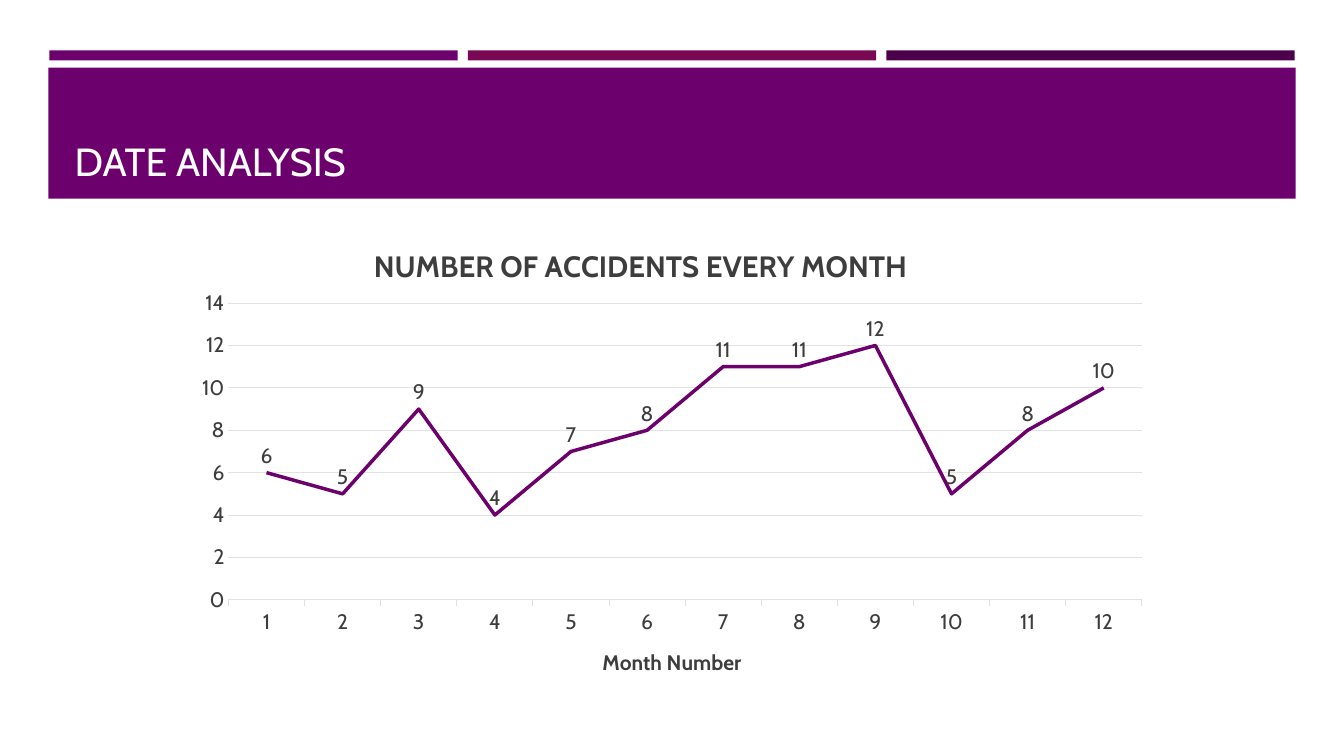
from lxml import etree
from pptx import Presentation
from pptx.chart.data import CategoryChartData
from pptx.dml.color import RGBColor
from pptx.enum import chart as charts, shapes, text
from pptx.oxml.ns import qn
from pptx.util import Inches, Pt

PURPLE = RGBColor(0x6C, 0x00, 0x6C)
PLUM = RGBColor(0x79, 0x07, 0x53)
DARK_PURPLE = RGBColor(0x4C, 0x00, 0x4C)
WHITE = RGBColor(0xFF, 0xFF, 0xFF)
GREY = RGBColor(0x3D, 0x3D, 0x3D)
LIGHT_GREY = RGBColor(0xE2, 0xE2, 0xE2)
FONT = "Cabin"

ACCIDENTS = [6, 5, 9, 4, 7, 8, 11, 11, 12, 5, 8, 10]


def set_font(font, size, color, bold=False):
    font.name = FONT
    font.size = Pt(size)
    font.bold = bold
    font.color.rgb = color


def set_line(line, color, width):
    line.color.rgb = color
    line.width = Pt(width)


def add_bar(page, left, top, width, height, color):
    bar = page.shapes.add_shape(shapes.MSO_SHAPE.RECTANGLE, Inches(left),
                                Inches(top), Inches(width), Inches(height))
    bar.shadow.inherit = False
    bar.fill.solid()
    bar.fill.fore_color.rgb = color
    bar.line.fill.background()


def add_title(page, words):
    title = page.shapes.title
    title.left, title.top = Inches(0.64), Inches(0.77)
    title.width, title.height = Inches(12.06), Inches(1.11)
    frame = title.text_frame
    frame.text = words
    frame.word_wrap = True
    frame.auto_size = text.MSO_AUTO_SIZE.NONE
    frame.vertical_anchor = text.MSO_ANCHOR.BOTTOM
    para = frame.paragraphs[0]
    para.alignment = text.PP_ALIGN.LEFT
    set_font(para.font, 28, WHITE)
    # Bring the title in front of the banner
    title.element.getparent().append(title.element)


def set_layout(element, index, **settings):
    """Place a chart part by fractions of the chart area."""
    for layout in element.findall(qn("c:layout")):
        element.remove(layout)
    layout = etree.Element(qn("c:layout"))
    manual = etree.SubElement(layout, qn("c:manualLayout"))
    for name, value in settings.items():
        etree.SubElement(manual, qn(f"c:{name}")).set("val", str(value))
    element.insert(index, layout)


def set_heading(frame, words, size):
    frame.text = words
    set_font(frame.paragraphs[0].font, size, GREY, bold=True)


def format_axes(chart):
    months, counts = chart.category_axis, chart.value_axis
    for axis in (months, counts):
        set_font(axis.tick_labels.font, 15, GREY)
        axis.minor_tick_mark = charts.XL_TICK_MARK.NONE

    months.major_tick_mark = charts.XL_TICK_MARK.OUTSIDE
    months.has_major_gridlines = False
    set_line(months.format.line, LIGHT_GREY, 0.75)
    set_heading(months.axis_title.text_frame, "Month Number", 15)

    counts.major_tick_mark = charts.XL_TICK_MARK.NONE
    counts.minimum_scale, counts.maximum_scale = 0, 14
    counts.major_unit = 2
    counts.format.line.fill.background()
    set_line(counts.major_gridlines.format.line, LIGHT_GREY, 0.75)


def format_series(plot):
    plot.vary_by_categories = False
    series = plot.series[0]
    series.smooth = False
    series.marker.style = charts.XL_MARKER_STYLE.NONE
    set_line(series.format.line, PURPLE, 2.5)
    labels = series.data_labels
    labels.show_value = True
    labels.position = charts.XL_LABEL_POSITION.ABOVE
    set_font(labels.font, 15, GREY)


def add_accident_chart(page):
    data = CategoryChartData()
    data.categories = [str(month) for month in range(1, 13)]
    data.add_series("Series 1", ACCIDENTS)
    chart = page.shapes.add_chart(
        charts.XL_CHART_TYPE.LINE, Inches(1.81), Inches(2.19),
        Inches(9.71), Inches(4.75), data).chart
    set_font(chart.font, 10, GREY)
    chart.has_legend = False
    set_heading(chart.chart_title.text_frame,
                "NUMBER OF ACCIDENTS EVERY MONTH", 21)
    format_axes(chart)
    format_series(chart.plots[0])

    # Fixed places for the heading and the plot
    body = chart.element.find(qn("c:chart"))
    set_layout(body.find(qn("c:title")), 1,
               xMode="edge", yMode="edge", x=0.19, y=0.04)
    set_layout(body.find(qn("c:plotArea")), 0, layoutTarget="inner",
               xMode="edge", yMode="edge", x=0.047, y=0.172, w=0.933, h=0.62)


def main():
    deck = Presentation()
    deck.slide_width, deck.slide_height = Inches(13.33), Inches(7.5)
    page = deck.slides.add_slide(deck.slide_layouts[5])

    # Three accent bars above the banner
    for column, color in enumerate((PURPLE, PLUM, DARK_PURPLE)):
        add_bar(page, 0.49 + 4.15 * column, 0.5, 4.05, 0.1, color)
    add_bar(page, 0.48, 0.67, 12.37, 1.3, PURPLE)

    add_title(page, "DATE ANALYSIS")
    add_accident_chart(page)
    deck.save("out.pptx")


if __name__ == "__main__":
    main()
